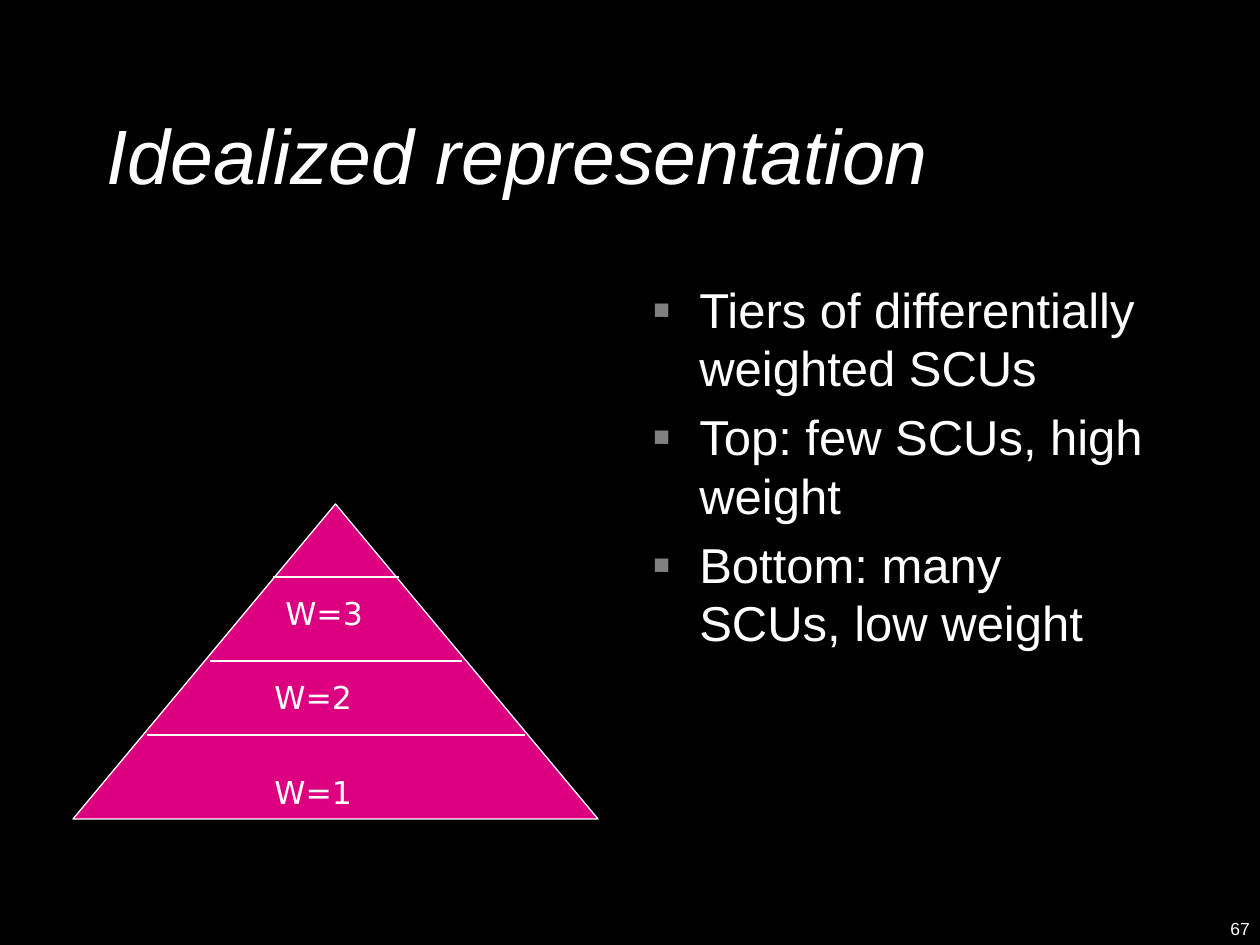
from lxml.etree import SubElement
from pptx import Presentation
from pptx.dml.color import RGBColor
from pptx.enum.shapes import MSO_CONNECTOR as Connector, MSO_SHAPE as Shape
from pptx.enum.text import MSO_ANCHOR as Anchor
from pptx.oxml.ns import qn
from pptx.util import Emu, Pt

COLORS = {"background": "000000", "text": "FFFFFF", "tier": "DC0081", "bullet": "808080"}
EMU_PER_PX = 914400 / 126
BULLET_INDENT = 47


def px(length):
    return Emu(round(length * EMU_PER_PX))


def color(name):
    return RGBColor.from_string(COLORS[name])


def style_line(line):
    line.color.rgb = color("text")
    line.width = Pt(0.75)


def add_text(slide, box, lines, size, font="Arial", italic=False, anchor=Anchor.TOP, wrap=True):
    """Add a text box with one paragraph per line and return its paragraphs."""
    frame = slide.shapes.add_textbox(*map(px, box)).text_frame
    frame.word_wrap = wrap
    frame.vertical_anchor = anchor
    for index, line in enumerate(lines):
        paragraph = frame.add_paragraph() if index else frame.paragraphs[0]
        run = paragraph.add_run()
        run.text = line
        run.font.name = font
        run.font.size = Pt(size)
        run.font.italic = italic
        run.font.color.rgb = color("text")
    return frame.paragraphs


def add_bullet(paragraph):
    """Give the paragraph a square bullet with a hanging indent."""
    properties = paragraph._p.get_or_add_pPr()
    properties.set("marL", str(px(BULLET_INDENT)))
    properties.set("indent", str(-px(BULLET_INDENT)))
    bullet_color = SubElement(properties, qn("a:buClr"))
    SubElement(bullet_color, qn("a:srgbClr"), val=COLORS["bullet"])
    SubElement(properties, qn("a:buSzPct"), val="110000")
    SubElement(properties, qn("a:buFont"), typeface="Arial")
    SubElement(properties, qn("a:buChar"), char="▪")


def add_bullet_list(slide, box, items):
    for paragraph in add_text(slide, box, items, 28):
        paragraph.space_after = Pt(5.6)
        add_bullet(paragraph)


def add_pyramid(slide, box):
    pyramid = slide.shapes.add_shape(Shape.ISOSCELES_TRIANGLE, *map(px, box))
    pyramid.shadow.inherit = False
    pyramid.fill.solid()
    pyramid.fill.fore_color.rgb = color("tier")
    style_line(pyramid.line)


def add_divider(slide, center, y, width):
    left, right = center - width / 2, center + width / 2
    divider = slide.shapes.add_connector(Connector.STRAIGHT, px(left), px(y), px(right), px(y))
    style_line(divider.line)
    SubElement(divider._element.spPr, qn("a:effectLst"))


def main():
    presentation = Presentation()
    presentation.slide_width, presentation.slide_height = px(1260), px(945)
    slide = presentation.slides.add_slide(presentation.slide_layouts[6])
    slide.background.fill.solid()
    slide.background.fill.fore_color.rgb = color("background")

    add_text(slide, (1218, 912, 52, 33), ["67"], 10, wrap=False)
    add_text(slide, (94, 66, 1071, 176), ["Idealized representation"], 44,
             italic=True, anchor=Anchor.MIDDLE)
    add_bullet_list(slide, (640, 273, 525, 567), [
        "Tiers of differentially weighted SCUs",
        "Top: few SCUs, high weight",
        "Bottom: many SCUs, low weight",
    ])

    add_pyramid(slide, (73, 504, 525, 315))
    for y, width in ((577, 126), (661, 252), (735, 378)):
        add_divider(slide, 336, y, width)
    for weight, left, top, width in ((1, 262, 767, 158), (2, 262, 672, 210), (3, 273, 588, 126)):
        add_text(slide, (left, top, width, 50), [f"W={weight}"], 18, font="DejaVu Sans")

    presentation.save("out.pptx")


if __name__ == "__main__":
    main()
